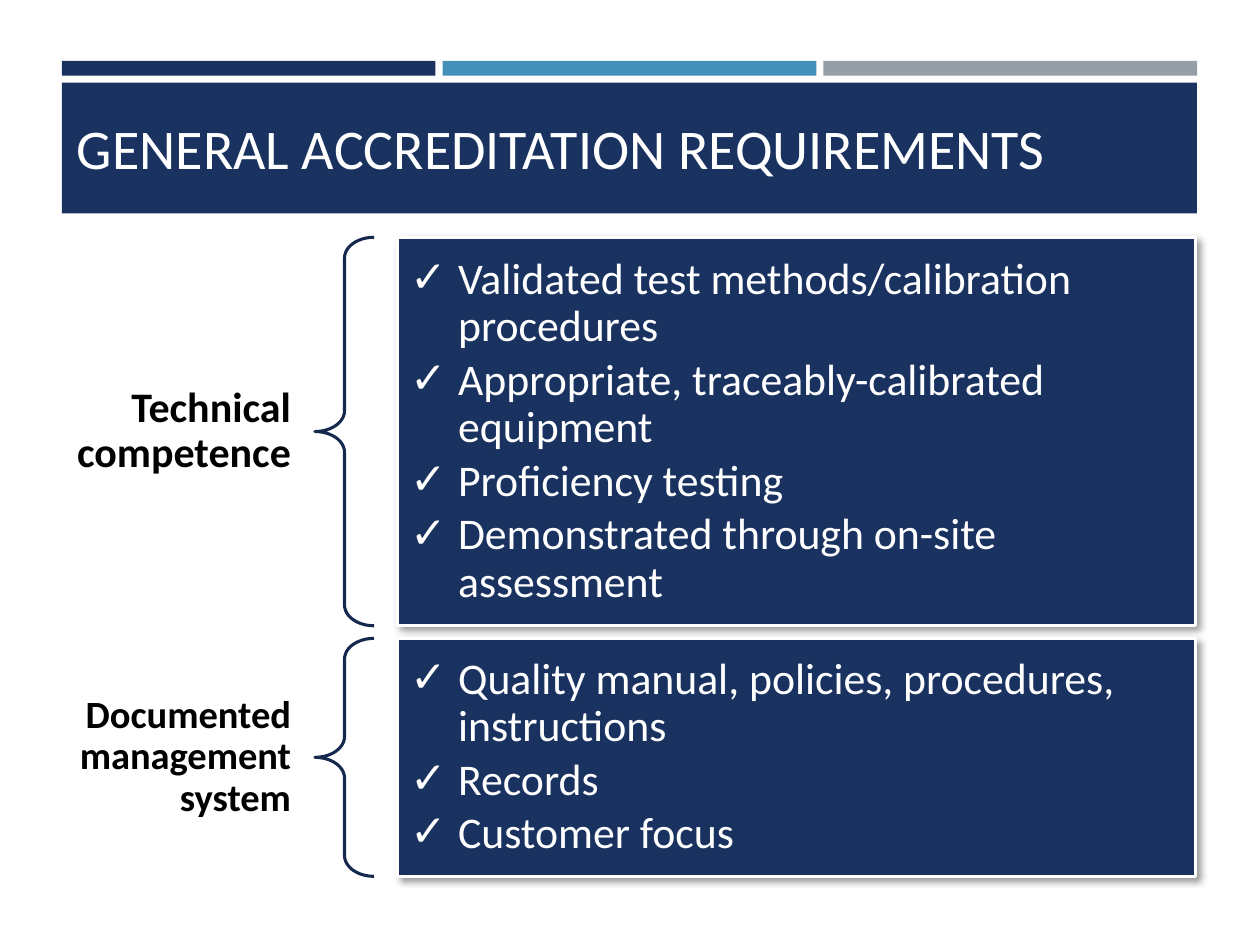
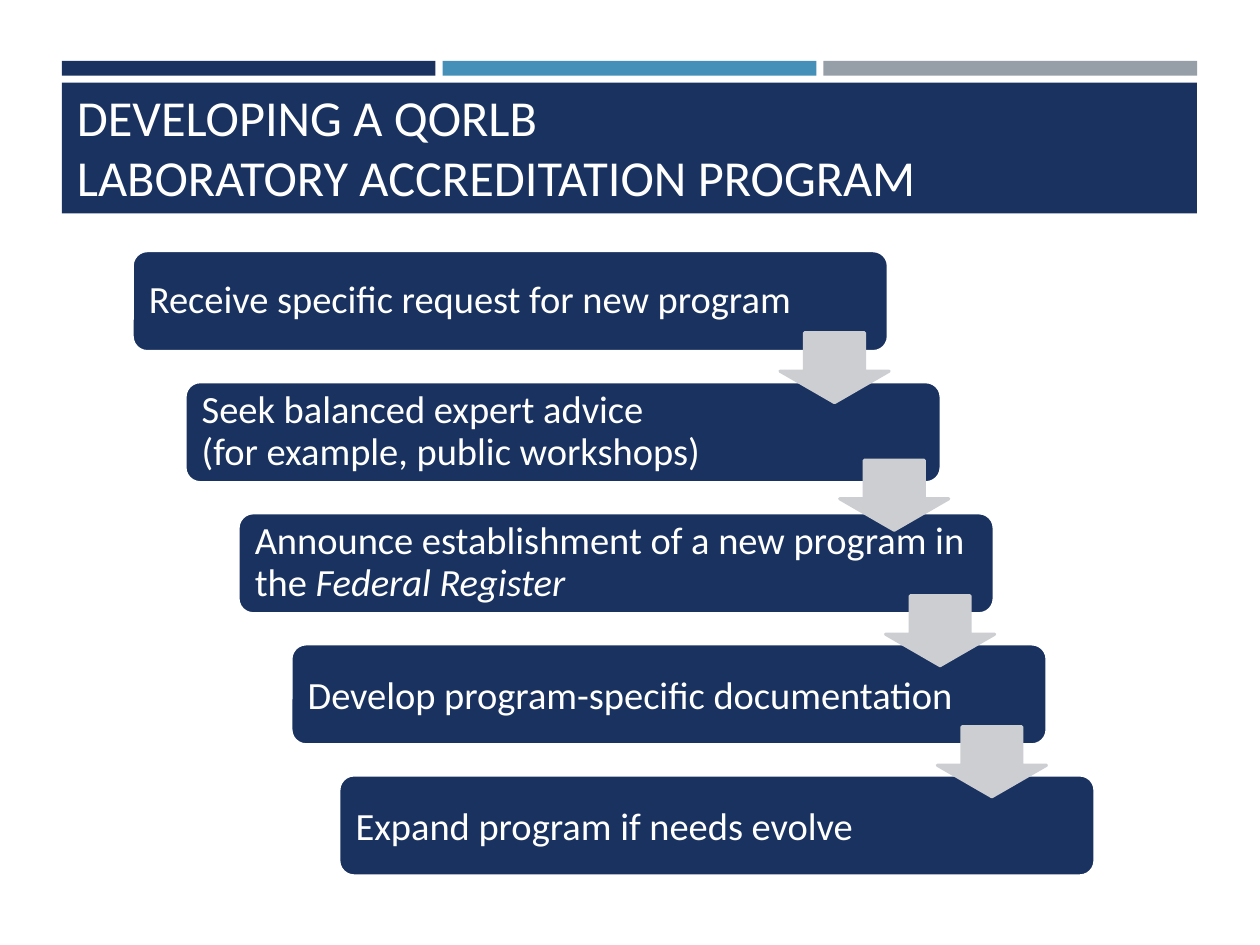
"""Build two slides on laboratory accreditation: requirements and program steps."""
from lxml import etree
from pptx import Presentation
from pptx import util as u
from pptx.dml.color import RGBColor
from pptx.enum import shapes, text
from pptx.oxml import ns

Pt = u.Pt
NAVY = RGBColor(0x1A, 0x32, 0x60)
DARK_NAVY = RGBColor(0x15, 0x28, 0x4D)
BLUE = RGBColor(0x45, 0x90, 0xB8)
GRAY = RGBColor(0x96, 0x9F, 0xA7)
LIGHT_GRAY = RGBColor(0xCD, 0xCE, 0xD2)
WHITE = RGBColor(0xFF, 0xFF, 0xFF)
BLACK = RGBColor(0, 0, 0)
FONT = "Calibri"
LEFT, RIGHT = text.PP_ALIGN.LEFT, text.PP_ALIGN.RIGHT
MIDDLE, BOTTOM = text.MSO_ANCHOR.MIDDLE, text.MSO_ANCHOR.BOTTOM
PRESET = shapes.MSO_SHAPE


def draw(slide, preset, left, top, width, height, fill=None, line=None):
    shape = slide.shapes.add_shape(preset, Pt(left), Pt(top), Pt(width), Pt(height))
    shape.shadow.inherit = False
    if fill is None:
        shape.fill.background()
    else:
        shape.fill.solid()
        shape.fill.fore_color.rgb = fill
    if line is None:
        shape.line.fill.background()
    else:
        shape.line.color.rgb = line
        shape.line.width = Pt(1.75)
    return shape


def format_text(shape, size, color, align=LEFT, anchor=MIDDLE, insets=(7.2, 3.6, 7.2, 3.6), spacing=0.9, bold=False):
    frame = shape.text_frame
    frame.word_wrap = True
    frame.auto_size = text.MSO_AUTO_SIZE.NONE
    frame.vertical_anchor = anchor
    frame.margin_left, frame.margin_top, frame.margin_right, frame.margin_bottom = map(Pt, insets)
    for paragraph in frame.paragraphs:
        paragraph.alignment = align
        paragraph.line_spacing = spacing
        for run in paragraph.runs:
            run.font.name = FONT
            run.font.size = Pt(size)
            run.font.bold = bold
            run.font.color.rgb = color


deck = Presentation()
deck.slide_width, deck.slide_height = Pt(720), Pt(540)
layout = deck.slide_layouts[5]
for placeholder in list(layout.placeholders):
    if placeholder.placeholder_format.type != shapes.PP_PLACEHOLDER.TITLE:
        layout.shapes.element.remove(placeholder.element)

requirements = deck.slides.add_slide(layout)
bands = [draw(requirements, PRESET.RECTANGLE, 35.3 + 217.6 * i, 34.8, 213.6, 8.4, color)
         for i, color in enumerate((NAVY, BLUE, GRAY))]
bands.append(draw(requirements, PRESET.RECTANGLE, 35.3, 47.3, 648.7, 74.6, NAVY))
for band in bands:
    layout.shapes.element.insert(2, band.element)
process = deck.slides.add_slide(layout)

titles = [
    (requirements, "GENERAL ACCREDITATION REQUIREMENTS", 32, 678, MIDDLE),
    (process, "DEVELOPING A QORLB\vLABORATORY ACCREDITATION PROGRAM", 28.8, 650, BOTTOM),
]
for slide, wording, size, width, anchor in titles:
    title = slide.shapes.title
    title.left, title.top, title.width, title.height = Pt(36.7), Pt(46.5), Pt(width), Pt(75.2)
    title.text_frame.text = wording
    format_text(title, size, WHITE, anchor=anchor, spacing=1)

requirement_groups = [
    ("Technical competence", 24, 135.6, 222, [
        "Validated test methods/calibration procedures",
        "Appropriate, traceably-calibrated equipment",
        "Proficiency testing",
        "Demonstrated through on-site assessment",
    ]),
    ("Documented management system", 22, 364.8, 136, [
        "Quality manual, policies, procedures, instructions",
        "Records",
        "Customer focus",
    ]),
]
for heading, size, top, height, items in requirement_groups:
    label = requirements.shapes.add_textbox(Pt(12.2), Pt(top), Pt(167.8), Pt(height))
    label.text_frame.text = heading
    format_text(label, size, BLACK, RIGHT, insets=(13.7, 5, 13.7, 5), bold=True)

    brace = draw(requirements, PRESET.LEFT_BRACE, 180, top, 33.8, height, line=DARK_NAVY)
    brace.adjustments[0] = 0.35

    panel = draw(requirements, PRESET.RECTANGLE, 227.3, top, 456, height, NAVY, WHITE)
    effects = panel.element.spPr.find(ns.qn("a:effectLst"))
    shadow = etree.SubElement(effects, ns.qn("a:outerShdw"), blurRad=str(Pt(4)), dist=str(Pt(3)),
                              dir="2700000", algn="tl", rotWithShape="0")
    shadow_color = etree.SubElement(shadow, ns.qn("a:srgbClr"), val="000000")
    etree.SubElement(shadow_color, ns.qn("a:alpha"), val="40000")
    panel.text_frame.text = "\n".join(items)
    format_text(panel, 25, WHITE, insets=(7.2,) * 4)
    for item in panel.text_frame.paragraphs:
        item.space_after = Pt(3.75)
        properties = item._p.get_or_add_pPr()
        properties.set("marL", str(Pt(27.4)))
        properties.set("indent", str(-Pt(27.4)))
        etree.SubElement(properties, ns.qn("a:buFont"), typeface=FONT)
        etree.SubElement(properties, ns.qn("a:buChar"), char="✓")

steps = [
    (75.6, 0.9, ["Receive specific request for new program"]),
    (105.8, 0.9, ["Seek balanced expert advice\v(for example, public workshops)"]),
    (136.1, 0.9, ["Announce establishment of a new program in the ", "Federal Register"]),
    (166.3, 1, ["Develop program-specific documentation"]),
    (193.7, 1, ["Expand program if needs evolve"]),
]
for i, (left, spacing, parts) in enumerate(steps):
    step = draw(process, PRESET.ROUNDED_RECTANGLE, left, 143.3 + 74.9 * i, 432, 57.6, NAVY, WHITE)
    step.adjustments[0] = 0.15
    step.text_frame.text = parts[0]
    for emphasis in parts[1:]:
        run = step.text_frame.paragraphs[0].add_run()
        run.text = emphasis
        run.font.italic = True
    format_text(step, 22, WHITE, insets=(7, 7, 11, 7), spacing=spacing)

for left, top in [(445.7, 190.1), (479.8, 263), (506, 340.4), (535.6, 415.3)]:
    arrow = draw(process, PRESET.DOWN_ARROW, left, top, 62.4, 40, LIGHT_GRAY, LIGHT_GRAY)
    arrow.adjustments[0], arrow.adjustments[1] = 0.55, 0.45

deck.save("out.pptx")
